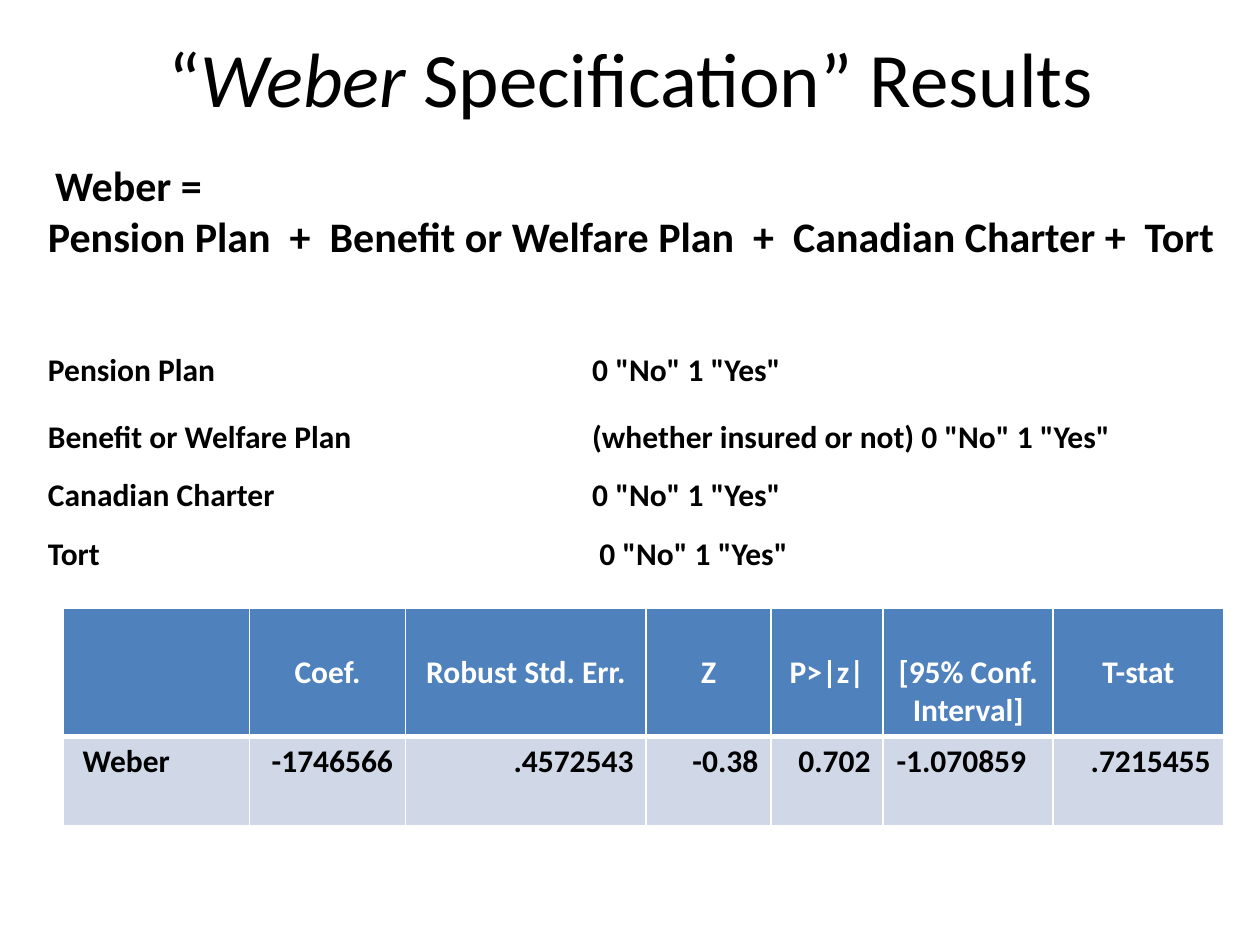
import pptx
import pptx.dml.color
import pptx.enum.text
import pptx.oxml
import pptx.oxml.ns
import pptx.util

Pt = pptx.util.Pt
ALIGN = pptx.enum.text.PP_ALIGN
ANCHOR = pptx.enum.text.MSO_ANCHOR
BLACK, WHITE, BLUE, PALE = "000000", "FFFFFF", "4F81BD", "D0D8E8"


def rgb(value):
    return pptx.dml.color.RGBColor.from_string(value)


def add_run(p, text, color=BLACK, **formats):
    r = p.add_run()
    r.text = text
    r.font.color.rgb = rgb(color)
    for name, value in {"name": "Calibri", "size": Pt(18), **formats}.items():
        setattr(r.font, name, value)


def add_title(s, runs):
    sp = s.shapes.add_textbox(Pt(36.7), Pt(9.4), Pt(648), Pt(68.4))
    tf = sp.text_frame
    tf.word_wrap = True
    tf.vertical_anchor = ANCHOR.MIDDLE
    p = tf.paragraphs[0]
    p.alignment = ALIGN.CENTER
    for text, italic in runs:
        add_run(p, text, size=Pt(44), italic=italic)


def add_table(s, left, top, widths, heights):
    frame = s.shapes.add_table(len(heights), len(widths), Pt(left), Pt(top),
                               Pt(sum(widths)), Pt(sum(heights)))
    table = frame.table
    table.first_row = table.horz_banding = False
    for column, width in zip(table.columns, widths):
        column.width = Pt(width)
    for row, height in zip(table.rows, heights):
        row.height = Pt(height)
    return table


def set_borders(cell, **widths):
    tcPr = cell._tc.get_or_add_tcPr()
    for i, side in enumerate("LRTB"):
        line = pptx.oxml.parse_xml(
            f'<a:ln{side} {pptx.oxml.ns.nsdecls("a")} w="{Pt(widths.get(side, 1))}">'
            f'<a:solidFill><a:srgbClr val="{WHITE}"/></a:solidFill></a:ln{side}>')
        tcPr.insert(i, line)


def fill_cell(cell, text, fill, color, align, **margins):
    cell.fill.solid()
    cell.fill.fore_color.rgb = rgb(fill)
    for name, value in margins.items():
        setattr(cell, name, Pt(value))
    p = cell.text_frame.paragraphs[0]
    p.alignment = align
    if text:
        add_run(p, text, color, bold=True)


def add_results(s):
    table = add_table(s, 36, 347.8, [106.5, 89.3, 137.5, 71.3, 64.1, 97.2, 97.2], [73, 51])
    headers = ["", "Coef.", "Robust Std. Err.", "Z", "P>|z|", "[95% Conf. Interval]", "T-stat"]
    values = ["Weber", "-1746566", ".4572543", "-0.38", "0.702", "-1.070859", ".7215455"]
    insets = {0: {"margin_left": 11.3}, 5: {"margin_right": 15.4}}
    for i, (header, value) in enumerate(zip(headers, values)):
        head, body = table.cell(0, i), table.cell(1, i)
        fill_cell(head, header, BLUE, WHITE, ALIGN.CENTER, margin_top=25.6)
        fill_cell(body, value, PALE, BLACK, ALIGN.RIGHT if i else ALIGN.LEFT,
                  **insets.get(i, {}))
        set_borders(head, B=3)
        set_borders(body, T=3)


def add_definitions(s):
    table = add_table(s, 20.2, 88.6, [311, 274.3, 100.8], [108.7, 38.2, 33.1, 33.8, 40.3])
    for cell in table.iter_cells():
        cell.fill.background()

    # Formula across the full width
    formula = table.cell(0, 0)
    formula.merge(table.cell(0, 2))
    tf = formula.text_frame
    p = tf.paragraphs[0]
    add_run(p, " ", bold=True)
    add_run(p, "Weber =", size=Pt(24), bold=True)
    add_run(tf.add_paragraph(),
            "Pension Plan  +  Benefit or Welfare Plan  +  Canadian Charter +  Tort",
            size=Pt(24), bold=True)

    # Variables and their coding
    variables = [
        ("Pension Plan", '0 "No" 1 "Yes"'),
        ("Benefit or Welfare Plan", '(whether insured or not) 0 "No" 1 "Yes"'),
        ("Canadian Charter", '0 "No" 1 "Yes"'),
        ("Tort", ' 0 "No" 1 "Yes"'),
    ]
    for row, texts in enumerate(variables, 1):
        if texts[0] != "Canadian Charter":
            table.cell(row, 1).merge(table.cell(row, 2))
        for column, text in enumerate(texts):
            add_run(table.cell(row, column).text_frame.paragraphs[0], text, bold=True)


def main():
    prs = pptx.Presentation()
    prs.slide_width, prs.slide_height = Pt(720), Pt(540)
    s = prs.slides.add_slide(prs.slide_layouts[6])
    add_title(s, [("“", False), ("Weber ", True), ("Specification” Results", False)])
    add_results(s)
    add_definitions(s)
    prs.save("out.pptx")


if __name__ == "__main__":
    main()
